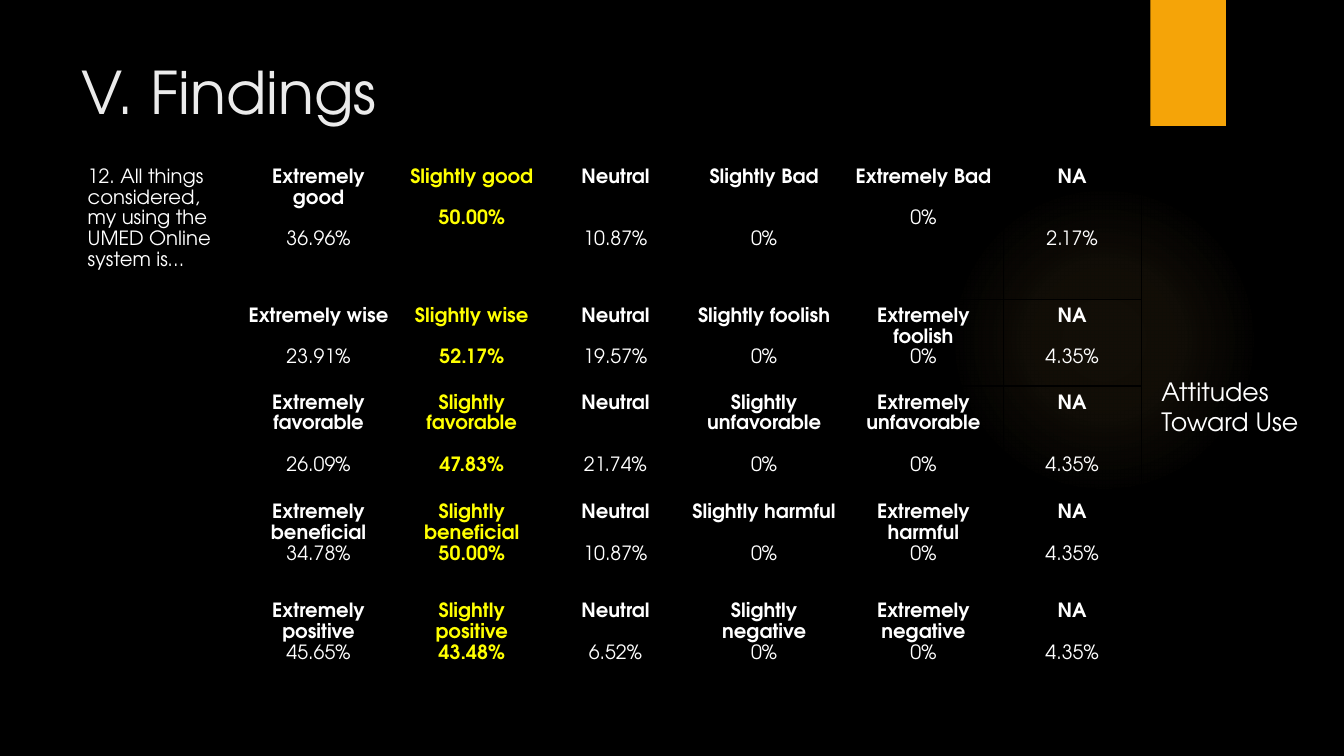
from lxml import etree
from pptx import Presentation
from pptx.dml.color import RGBColor
from pptx.enum.shapes import MSO_SHAPE as Shape
from pptx.enum.text import MSO_ANCHOR as Anchor, MSO_AUTO_SIZE as AutoSize, PP_ALIGN as Align
from pptx.oxml import parse_xml
from pptx.util import Inches, Pt

FONT = "TeX Gyre Adventor"
WHITE, YELLOW, BLACK = "FFFFFF", "FFFF00", "000000"
AMBER, GLOW, PALE = "F5A408", "FAC96A", "EBEBEB"
LINE = 14.8  # points from one table line to the next
NS = 'xmlns:a="http://schemas.openxmlformats.org/drawingml/2006/main"'


def color(hex_value):
    return RGBColor.from_string(hex_value)


def write(paragraph, text, size, hex_value, bold=False, align=Align.LEFT):
    paragraph.text = text
    paragraph.alignment = align
    formats = {"name": FONT, "size": Pt(size), "bold": bold}
    for key, value in formats.items():
        setattr(paragraph.font, key, value)
    paragraph.font.color.rgb = color(hex_value)


prs = Presentation()
prs.slide_width, prs.slide_height = Inches(13.33), Inches(7.5)
slide = prs.slides.add_slide(prs.slide_layouts[5])
slide.background.fill.solid()
slide.background.fill.fore_color.rgb = color(BLACK)

# Backdrop: faint glow and amber tab
glow = slide.shapes.add_shape(Shape.OVAL, Inches(9.41), Inches(1.83), Inches(3.08), Inches(3.08))
tab = slide.shapes.add_shape(Shape.RECTANGLE, Inches(11.41), 0, Inches(0.75), Inches(1.25))
for backdrop in (glow, tab):
    backdrop.shadow.inherit = False
    backdrop.line.fill.background()
tab.fill.solid()
tab.fill.fore_color.rgb = color(AMBER)

stops = "".join(
    f'<a:gs pos="{pos}000"><a:srgbClr val="{GLOW}"><a:alpha val="{alpha}000"/></a:srgbClr></a:gs>'
    for pos, alpha in [(0, 7), (36, 6), (69, 0)])
glow_fill = parse_xml(
    f'<a:gradFill {NS} rotWithShape="1"><a:gsLst>{stops}</a:gsLst><a:path path="circle">'
    '<a:fillToRect l="50000" t="50000" r="50000" b="50000"/></a:path></a:gradFill>')
glow.element.spPr.find("{*}prstGeom").addnext(glow_fill)

# Survey table: answer, share, empty lines between the two
question = "12. All things considered, my using the UMED Online system is…"
answers = [
    [("Extremely good", "36.96%", 1), ("Slightly good", "50.00%", 1), ("Neutral", "10.87%", 2),
     ("Slightly Bad", "0%", 2), ("Extremely Bad", "0%", 1), ("NA", "2.17%", 2)],
    [("Extremely wise", "23.91%", 1), ("Slightly wise", "52.17%", 1), ("Neutral", "19.57%", 1),
     ("Slightly foolish", "0%", 1), ("Extremely foolish", "0%", 0), ("NA", "4.35%", 1)],
    [("Extremely favorable", "26.09%", 1), ("Slightly favorable", "47.83%", 1),
     ("Neutral", "21.74%", 2), ("Slightly unfavorable", "0%", 1),
     ("Extremely unfavorable", "0%", 1), ("NA", "4.35%", 2)],
    [("Extremely beneficial", "34.78%", 0), ("Slightly beneficial", "50.00%", 0),
     ("Neutral", "10.87%", 1), ("Slightly harmful", "0%", 1),
     ("Extremely harmful", "0%", 0), ("NA", "4.35%", 1)],
    [("Extremely positive", "45.65%", 0), ("Slightly positive", "43.48%", 0),
     ("Neutral", "6.52%", 1), ("Slightly negative", "0%", 0),
     ("Extremely negative", "0%", 0), ("NA", "4.35%", 1)],
]
widths = [1.57, 1.56, 1.48, 1.37, 1.58, 1.58, 1.37]
heights = [1.38, 0.86, 1.09, 0.98, 0.85]
findings = slide.shapes.add_table(
    len(heights), len(widths), Inches(0.81), Inches(1.59),
    Inches(sum(widths)), Inches(sum(heights))).table
findings.first_row = findings.horz_banding = False
for column, width in zip(findings.columns, widths):
    column.width = Inches(width)
for row, height in zip(findings.rows, heights):
    row.height = Inches(height)

for cell in findings.iter_cells():
    for side in ("left", "right", "top", "bottom"):
        setattr(cell, f"margin_{side}", Inches(0.06))
    cell.fill.background()
    properties = cell._tc.get_or_add_tcPr()
    for index, edge in enumerate(("lnL", "lnR", "lnT", "lnB")):
        properties.insert(index, etree.fromstring(
            f'<a:{edge} {NS} w="12700"><a:solidFill><a:srgbClr val="{BLACK}"/>'
            f'</a:solidFill></a:{edge}>'))

question_line = findings.cell(0, 0).text_frame.paragraphs[0]
write(question_line, question, 14, WHITE)
question_line.line_spacing = Pt(LINE)

for row_index, row_answers in enumerate(answers):
    for col_index, (answer, share, gap) in enumerate(row_answers, start=1):
        top_choice = col_index == 2
        ink = YELLOW if top_choice else WHITE
        frame = findings.cell(row_index, col_index).text_frame
        answer_line, share_line = frame.paragraphs[0], frame.add_paragraph()
        write(answer_line, answer, 14, ink, True, Align.CENTER)
        write(share_line, share, 14, ink, top_choice, Align.CENTER)
        answer_line.line_spacing = share_line.line_spacing = Pt(LINE)
        share_line.space_before = Pt(gap * LINE)

# Title and side label
title = slide.shapes.title
title.left, title.top, title.width, title.height = map(Inches, (0.71, 0.5, 10.29, 1.53))
side_label = slide.shapes.add_textbox(Inches(11.42), Inches(3.68), Inches(1.74), Inches(0.71))
for box, text, size, ink in [(title, "V. Findings", 42, PALE),
                             (side_label, "Attitudes Toward Use", 18, WHITE)]:
    box.text_frame.word_wrap = True
    box.text_frame.auto_size = AutoSize.NONE
    box.text_frame.vertical_anchor = Anchor.TOP
    write(box.text_frame.paragraphs[0], text, size, ink)

prs.save("out.pptx")
